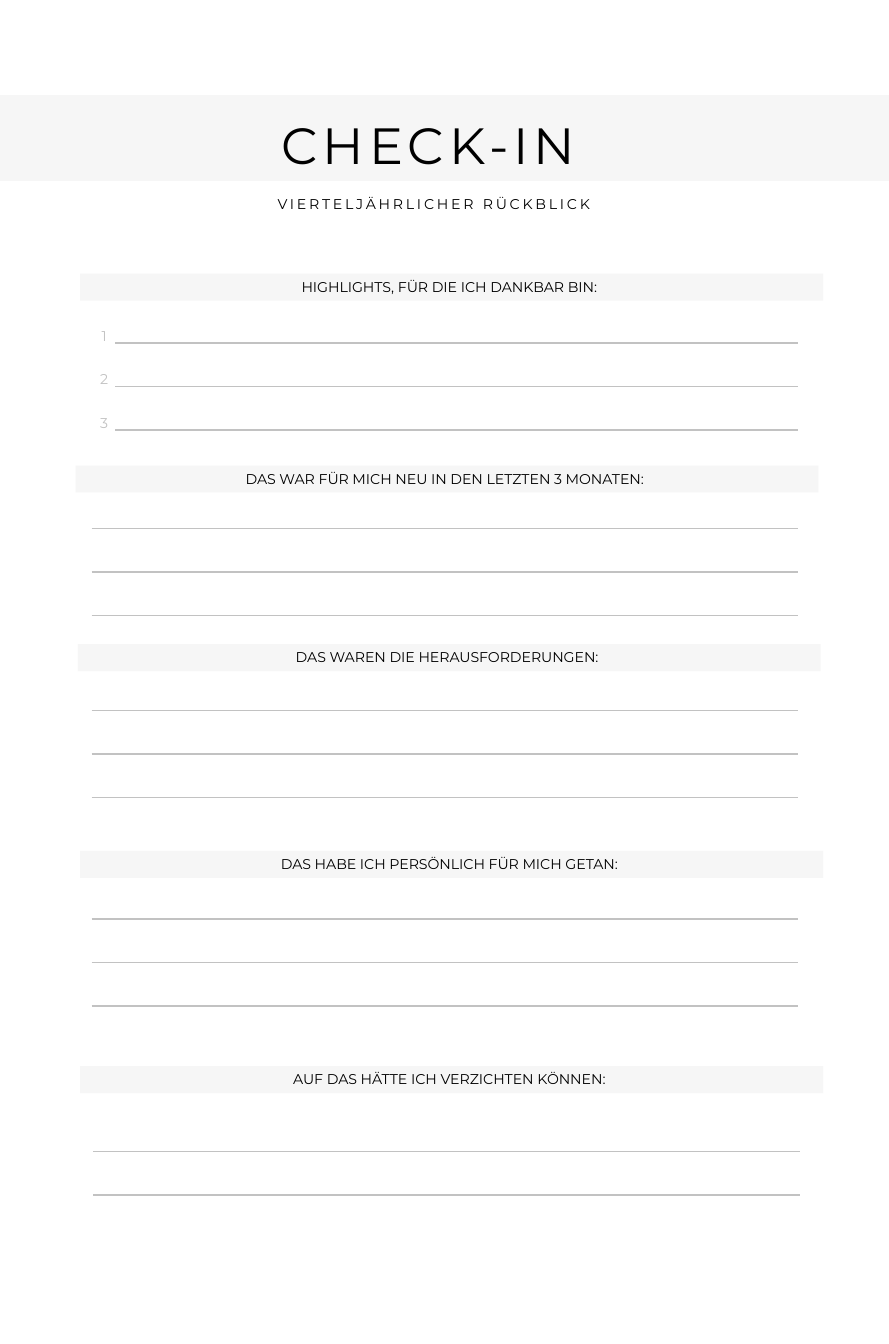
from dataclasses import dataclass
from pptx import Presentation
from pptx.dml.color import RGBColor
from pptx.enum.shapes import MSO_CONNECTOR as CONN, MSO_SHAPE as SHAPE
from pptx.enum.text import MSO_ANCHOR as ANCHOR, PP_ALIGN as ALIGN
from pptx.oxml.ns import qn
from pptx.util import Cm, Pt
from lxml import etree


@dataclass(frozen=True)
class Theme:
    font: str = "Montserrat"
    ink: RGBColor = RGBColor(0, 0, 0)
    rule: RGBColor = RGBColor(0xC2, 0xC2, 0xC2)
    band: RGBColor = RGBColor(0xF6, 0xF6, 0xF6)
    title: float = 25.2
    body: float = 7
    rule_width: float = 0.75


THEME = Theme()
PAGE_W, PAGE_H = 15.52, 23.47
RULE_PITCH = 0.76
NUMBER_INDENT = 0.41

SECTIONS = [
    ("HIGHLIGHTS, FÜR DIE ICH DANKBAR BIN:", (1.4, 4.78), (1.6, 5.99), 3, True),
    ("DAS WAR FÜR MICH NEU IN DEN LETZTEN 3 MONATEN:", (1.32, 8.13), (1.6, 9.23), 3, False),
    ("DAS WAREN DIE HERAUSFORDERUNGEN:", (1.36, 11.25), (1.6, 12.41), 3, False),
    ("DAS HABE ICH PERSÖNLICH FÜR MICH GETAN:", (1.4, 14.86), (1.6, 16.05), 3, False),
    ("AUF DAS HÄTTE ICH VERZICHTEN KÖNNEN:", (1.4, 18.62), (1.63, 20.11), 2, False),
]
BAR_W, BAR_H = 12.97, 0.47
RULE_W = 12.34


def add_text(s, text, x, y, w, h, *, size=THEME.body, color=THEME.ink, leading=9.8, spacing=0):
    tf = s.shapes.add_textbox(Cm(x), Cm(y), Cm(w), Cm(h)).text_frame
    tf.margin_left = tf.margin_top = tf.margin_right = tf.margin_bottom = 0
    tf.word_wrap = True
    tf.vertical_anchor = ANCHOR.TOP
    p = tf.paragraphs[0]
    p.alignment = ALIGN.CENTER
    p.line_spacing = Pt(leading)
    r = p.add_run()
    r.text = text
    r.font.name = THEME.font
    r.font.size = Pt(size)
    r.font.color.rgb = color
    if spacing:
        r._r.get_or_add_rPr().set("spc", str(round(spacing * 100)))


def add_band(s, x, y, w, h):
    sp = s.shapes.add_shape(SHAPE.RECTANGLE, Cm(x), Cm(y), Cm(w), Cm(h))
    sp.shadow.inherit = False
    sp.fill.solid()
    sp.fill.fore_color.rgb = THEME.band
    sp.line.fill.background()


def add_rule(s, x, y, w):
    line = s.shapes.add_connector(CONN.STRAIGHT, Cm(x), Cm(y), Cm(x + w), Cm(y))
    line.line.color.rgb = THEME.rule
    line.line.width = Pt(THEME.rule_width)
    etree.SubElement(line._element.spPr, qn("a:effectLst"))


def add_header(s, x, y, w, h):
    add_band(s, x, y, w, h)
    add_text(s, "CHECK-IN", x + 1.32, y + 0.15, 12.32, 1.2,
             size=THEME.title, leading=35.3, spacing=2.5)
    add_text(s, "VIERTELJÄHRLICHER RÜCKBLICK", x + 3.84, y + h + 0.21, 7.47, 0.33, spacing=1.4)


def add_heading(s, text, x, y, w, h):
    add_band(s, x, y, w, h)
    add_text(s, text, x + 0.07, y + 0.09, w - 0.22, 0.3, leading=8)


def add_writing_area(s, x, y, w, count, numbered):
    indent = NUMBER_INDENT if numbered else 0
    for i in range(count):
        rule_y = y + i * RULE_PITCH
        add_rule(s, x + indent, rule_y, w - indent)
        if numbered:
            add_text(s, str(i + 1), x + 0.03, rule_y - 0.33, 0.38, 0.33,
                     color=THEME.rule, spacing=1.4)


def main():
    prs = Presentation()
    prs.slide_width, prs.slide_height = Cm(PAGE_W), Cm(PAGE_H)
    s = prs.slides.add_slide(prs.slide_layouts[6])
    add_header(s, 0, 1.66, PAGE_W, 1.5)
    for text, bar, rules, count, numbered in SECTIONS:
        add_heading(s, text, *bar, BAR_W, BAR_H)
        add_writing_area(s, *rules, RULE_W, count, numbered)
    prs.save("out.pptx")


if __name__ == "__main__":
    main()
